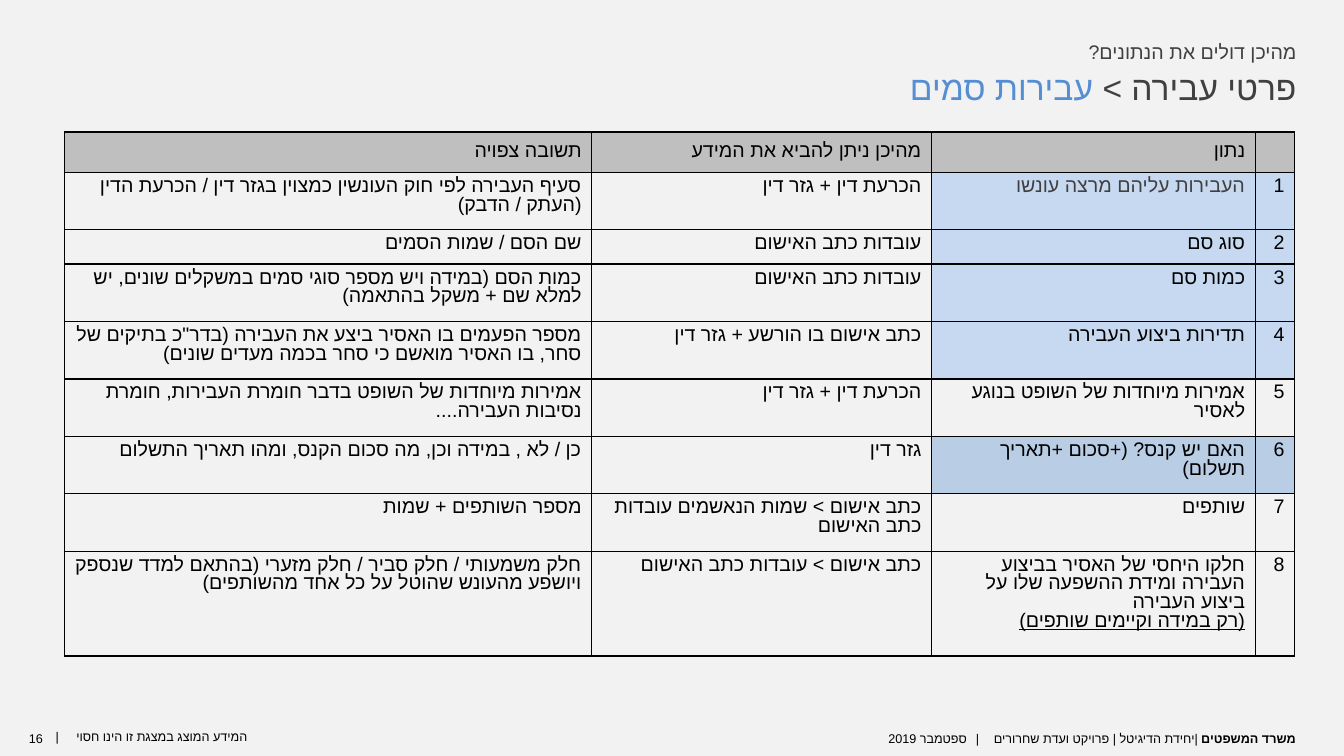
from pptx import Presentation
from pptx.dml.color import RGBColor
from pptx.enum.text import MSO_ANCHOR, PP_ALIGN
from pptx.oxml.ns import qn
from pptx.util import Inches, Pt
from lxml import etree

RIGHT, CENTER = PP_ALIGN.RIGHT, PP_ALIGN.CENTER
TOP, MIDDLE = MSO_ANCHOR.TOP, MSO_ANCHOR.MIDDLE

COLORS = {
    "background": "F2F2F2", "black": "000000", "heading": "404040",
    "accent": "558ED5", "header": "BFBFBF", "blue": "C6D9F1", "fine": "B9CDE5",
}
COLUMN_WIDTHS = [5.23, 3.37, 3.21, 0.39]
ROW_HEIGHTS = [0.33, 0.57, 0.34, 0.57, 0.57, 0.57, 0.57, 0.57, 1.04]
HEADERS = ["תשובה צפויה", "מהיכן ניתן להביא את המידע", "נתון", ""]

# Answer, source, datum, and the fill of the datum and its number
ROWS = [
    ("סעיף העבירה לפי חוק העונשין כמצוין בגזר דין / הכרעת הדין (העתק / הדבק)",
     "הכרעת דין + גזר דין", "העבירות עליהם מרצה עונשו", "blue"),
    ("שם הסם / שמות הסמים", "עובדות כתב האישום", "סוג סם", "blue"),
    ("כמות הסם (במידה ויש מספר סוגי סמים במשקלים שונים, יש למלא שם + משקל בהתאמה)",
     "עובדות כתב האישום", "כמות סם", "blue"),
    ("מספר הפעמים בו האסיר ביצע את העבירה (בדר\"כ בתיקים של סחר, "
     "בו האסיר מואשם כי סחר בכמה מעדים שונים)",
     "כתב אישום בו הורשע + גזר דין", "תדירות ביצוע העבירה", "blue"),
    ("אמירות מיוחדות של השופט בדבר חומרת העבירות, חומרת נסיבות העבירה....",
     "הכרעת דין + גזר דין", "אמירות מיוחדות של השופט בנוגע לאסיר", None),
    ("כן / לא , במידה וכן, מה סכום הקנס, ומהו תאריך התשלום",
     "גזר דין", "האם יש קנס? (+סכום +תאריך תשלום)", "fine"),
    ("מספר השותפים + שמות", "כתב אישום > שמות הנאשמים עובדות כתב האישום",
     "שותפים", None),
    ("חלק משמעותי / חלק סביר / חלק מזערי (בהתאם למדד שנספק ויושפע "
     "מהעונש שהוטל על כל אחד מהשותפים)", "כתב אישום > עובדות כתב האישום",
     "חלקו היחסי של האסיר בביצוע העבירה ומידת ההשפעה שלו על ביצוע העבירה\n"
     "(רק במידה וקיימים שותפים)", None),
]
# Cells, by row and column, whose font differs from that of their column
COLUMN_FONTS = ["Arial", "Calibri", "Calibri", "Calibri"]
ROBOTO_CELLS = {(1, 2), (2, 1), (3, 1)}


def rgb(name):
    return RGBColor.from_string(COLORS[name])


def format_run(run, size, font, color="black", bold=False, spacing=0):
    run.font.size = Pt(size)
    run.font.name = font
    run.font.bold = bold
    run.font.color.rgb = rgb(color)
    properties = run.font._element
    properties.set("lang", "he-IL")
    if spacing:
        properties.set("spc", str(spacing))
    etree.SubElement(properties, qn("a:cs")).set("typeface", "Arial")


def align_rtl(paragraph, alignment=RIGHT):
    paragraph.alignment = alignment
    paragraph._p.get_or_add_pPr().set("rtl", "1")


def place_text(shape, box, runs, size, font, alignment=RIGHT):
    """Fill a shape with one right-to-left line of (text, run options)."""
    shape.left, shape.top, shape.width, shape.height = map(Inches, box)
    frame = shape.text_frame
    frame.word_wrap = True
    frame.vertical_anchor = TOP
    paragraph = frame.paragraphs[0]
    align_rtl(paragraph, alignment)
    for text, options in runs:
        run = paragraph.add_run()
        run.text = text
        format_run(run, size, font, **options)


def add_text(slide, box, *arguments):
    shape = slide.shapes.add_textbox(*map(Inches, box))
    place_text(shape, box, *arguments)
    return shape


def add_heading(slide, right, top):
    add_text(slide, (right - 3.44, top, 3.44, 0.34),
             [("מהיכן דולים את הנתונים?", {"color": "heading"})], 14, "Roboto")
    place_text(slide.shapes.title, (right - 5.65, top + 0.26, 5.65, 0.5),
               [("פרטי עבירה > ", {"color": "heading"}),
                ("עבירות סמים", {"color": "accent"})], 24, "Roboto")


def add_footer(slide, top):
    number = add_text(slide, (0.03, top, 0.65, 0.31), [("16", {})], 9, "Calibri", CENTER)
    add_text(slide, (0.21, top, 2.34, 0.31),
             [("המידע המוצג במצגת זו הינו חסוי", {}), (" ", {"spacing": 1000}), ("|", {})],
             9, "Calibri")
    project = add_text(slide, (3.78, top, 9.22, 0.3),
                       [("משרד המשפטים ", {"bold": True}),
                        ("|יחידת הדיגיטל | פרויקט ועדת שחרורים", {}),
                        (" | ", {"spacing": 400}), ("ספטמבר 2019", {})], 9, "Calibri")
    for shape in (number, project):
        frame = shape.text_frame
        frame.margin_left = frame.margin_right = Inches(0.15)
        frame.margin_top = frame.margin_bottom = Inches(0.07)


def set_borders(cell):
    properties = cell._tc.get_or_add_tcPr()
    for position, side in enumerate(("a:lnL", "a:lnR", "a:lnT", "a:lnB")):
        line = etree.Element(qn(side), w=str(Pt(1)))
        fill = etree.SubElement(line, qn("a:solidFill"))
        etree.SubElement(fill, qn("a:srgbClr")).set("val", COLORS["black"])
        properties.insert(position, line)


def fill_cell(cell, text, font, color, fill, anchor):
    cell.text_frame.text = text
    cell.vertical_anchor = anchor
    for paragraph in cell.text_frame.paragraphs:
        align_rtl(paragraph)
        paragraph.line_spacing = 0.85
        for run in paragraph.runs:
            format_run(run, 14, font, color)
    if fill:
        cell.fill.solid()
        cell.fill.fore_color.rgb = rgb(fill)
    else:
        cell.fill.background()
    set_borders(cell)


def add_data_table(slide, left, top):
    box = (left, top, sum(COLUMN_WIDTHS), sum(ROW_HEIGHTS))
    table = slide.shapes.add_table(len(ROW_HEIGHTS), len(COLUMN_WIDTHS),
                                   *map(Inches, box)).table
    table.first_row = table.horz_banding = False
    for column, width in zip(table.columns, COLUMN_WIDTHS):
        column.width = Inches(width)
    for row, height in zip(table.rows, ROW_HEIGHTS):
        row.height = Inches(height)

    # Header row
    for column, text in enumerate(HEADERS):
        fill_cell(table.cell(0, column), text, "Arial", "black", "header", MIDDLE)

    # Numbered rows
    for row, (answer, source, datum, fill) in enumerate(ROWS, 1):
        for column, text in enumerate((answer, source, datum, str(row))):
            font = "Roboto" if (row, column) in ROBOTO_CELLS else COLUMN_FONTS[column]
            color = "heading" if (row, column) == (1, 2) else "black"
            fill_cell(table.cell(row, column), text, font, color,
                      fill if column >= 2 else None, TOP)

    # Condition in the last row
    condition = table.cell(len(ROWS), 2).text_frame.paragraphs[-1]
    condition.runs[0].font.underline = True


def main():
    presentation = Presentation()
    presentation.slide_width, presentation.slide_height = Inches(13.33), Inches(7.5)
    slide = presentation.slides.add_slide(presentation.slide_layouts[5])
    slide.background.fill.solid()
    slide.background.fill.fore_color.rgb = rgb("background")
    add_heading(slide, right=12.96, top=0.35)
    add_data_table(slide, left=0.64, top=1.31)
    add_footer(slide, top=7.18)
    presentation.save("out.pptx")


if __name__ == "__main__":
    main()
